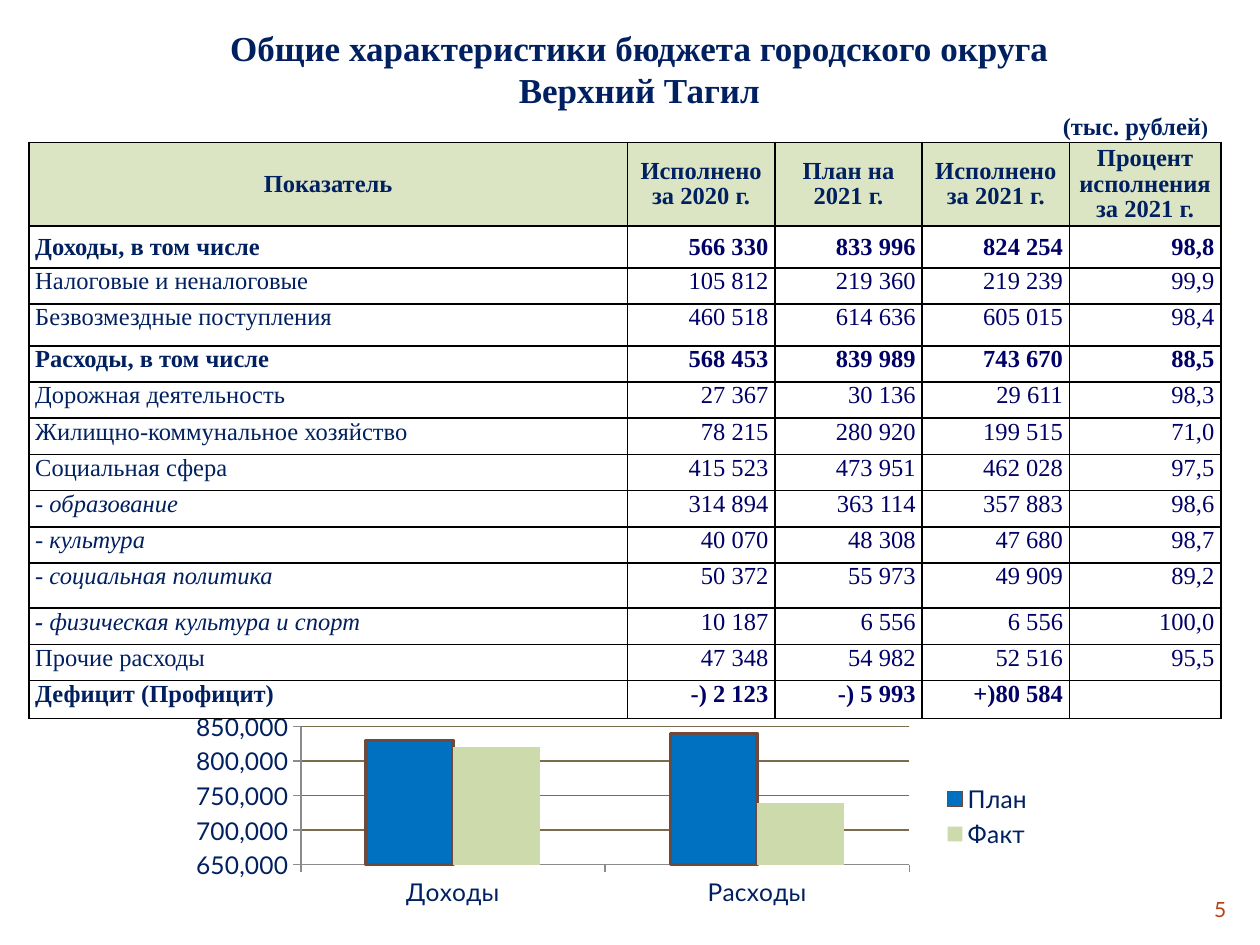
from lxml import etree
from pptx import Presentation
from pptx.chart.data import CategoryChartData as ChartData
from pptx.dml.color import RGBColor as RGB
from pptx.enum.chart import XL_CHART_TYPE as Kind, XL_LEGEND_POSITION as Side, XL_TICK_MARK as Tick
from pptx.enum.text import MSO_ANCHOR as Anchor, MSO_AUTO_SIZE as Auto, PP_ALIGN as Align
from pptx.oxml import parse_xml
from pptx.oxml.ns import nsdecls, qn
from pptx.util import Cm, Pt

NAVY = RGB(0x00, 0x20, 0x60)
INDIGO = RGB(0x00, 0x00, 0x66)
BLUE = RGB(0x00, 0x70, 0xC0)
GREEN = RGB(0xCC, 0xDA, 0xAC)
BROWN = RGB(0x6E, 0x49, 0x3C)
OLIVE = RGB(0x7C, 0x6B, 0x4D)
GREY = RGB(0x8B, 0x8B, 0x8B)
RUST = RGB(0xBA, 0x40, 0x14)
SERIF, SANS = "Times New Roman", "Lato"

HEAD = ["Показатель", "Исполнено за 2020 г.", "План на 2021 г.",
        "Исполнено за 2021 г.", "Процент исполнения за 2021 г."]
ROWS = [
    ("Доходы, в том числе", "566 330", "833 996", "824 254", "98,8"),
    ("Налоговые и неналоговые", "105 812", "219 360", "219 239", "99,9"),
    ("Безвозмездные поступления", "460 518", "614 636", "605 015", "98,4"),
    ("Расходы, в том числе", "568 453", "839 989", "743 670", "88,5"),
    ("Дорожная деятельность", "27 367", "30 136", "29 611", "98,3"),
    ("Жилищно-коммунальное хозяйство", "78 215", "280 920", "199 515", "71,0"),
    ("Социальная сфера", "415 523", "473 951", "462 028", "97,5"),
    ("- образование", "314 894", "363 114", "357 883", "98,6"),
    ("- культура", "40 070", "48 308", "47 680", "98,7"),
    ("- социальная политика", "50 372", "55 973", "49 909", "89,2"),
    ("- физическая культура и спорт", "10 187", "6 556", "6 556", "100,0"),
    ("Прочие расходы", "47 348", "54 982", "52 516", "95,5"),
    ("Дефицит (Профицит)", "-) 2 123", "-) 5 993", "+)80 584", ""),
]
TOTALS = {1, 4, 13}
SPORT = 11
WIDTHS = [12.07, 2.97, 2.97, 2.97, 3.05]
TALL = {0: 1.27, 1: 0.84, 3: 0.84, 10: 0.91}


def write(para, text, size=14, color=NAVY, bold=False, slant=False, face=SERIF, align=None):
    run = para.add_run()
    run.text = text
    font = run.font
    font.size, font.name = Pt(size), face
    font.bold, font.italic = bold, slant
    font.color.rgb = color
    if align is not None:
        para.alignment = align


def place(shape, box):
    shape.left, shape.top, shape.width, shape.height = map(Cm, box)


def add_title(slide, box):
    shape = slide.shapes.title
    place(shape, box)
    frame = shape.text_frame
    frame.word_wrap, frame.auto_size = True, Auto.NONE
    frame.vertical_anchor = Anchor.TOP
    first = frame.paragraphs[0]
    write(first, "Общие характеристики бюджета городского округа",
          size=20, bold=True, align=Align.CENTER)
    write(frame.add_paragraph(), "Верхний Тагил", size=20, bold=True, align=Align.CENTER)
    unit = frame.add_paragraph()
    write(unit, "(тыс. рублей", bold=True, align=Align.RIGHT)
    write(unit, ")", size=12, bold=True)


def frame_cell(cell):
    props = cell._tc.get_or_add_tcPr()
    for side in ("lnL", "lnR", "lnT", "lnB"):
        props.append(parse_xml(
            f'<a:{side} {nsdecls("a")} w="12700"><a:solidFill>'
            f'<a:srgbClr val="000000"/></a:solidFill></a:{side}>'))


def tint(cell):
    cell.fill.solid()
    cell.fill.fore_color.rgb = GREEN
    color = cell._tc.tcPr.find(qn("a:solidFill")).find(qn("a:srgbClr"))
    etree.SubElement(color, qn("a:alpha")).set("val", "70000")


def fill_cell(cell, row, col, text):
    cell.margin_left = cell.margin_right = Cm(0.13)
    cell.margin_top = cell.margin_bottom = 0
    cell.vertical_anchor = Anchor.MIDDLE if row < 2 else Anchor.TOP
    frame_cell(cell)
    para = cell.text_frame.paragraphs[0]
    if row == 0:
        tint(cell)
        para.line_spacing = 0.95
        write(para, text, bold=True, align=Align.CENTER)
        return
    cell.fill.background()
    bold = row in TOTALS
    if col:
        write(para, text, color=INDIGO, bold=bold, align=Align.RIGHT)
    elif row == SPORT:
        write(para, text[:2], bold=True, slant=True)
        write(para, text[2:], slant=True)
    else:
        write(para, text, bold=bold, slant=text.startswith("-"))


def add_grid(slide, box):
    data = [HEAD, *ROWS]
    table = slide.shapes.add_table(len(data), len(HEAD), *map(Cm, box)).table
    for col, width in zip(table.columns, WIDTHS):
        col.width = Cm(width)
    for i, texts in enumerate(data):
        table.rows[i].height = Cm(TALL.get(i, 0.73))
        for j, text in enumerate(texts):
            fill_cell(table.cell(i, j), i, j, text)


def style(font, size=14):
    font.size, font.name = Pt(size), SANS
    font.color.rgb = NAVY


def set_plot(chart, box):
    area = chart._chartSpace.chart.plotArea
    old = area.find(qn("c:layout"))
    if old is not None:
        area.remove(old)
    spots = "".join(f'<c:{key} val="{val}"/>' for key, val in zip("xywh", box))
    modes = '<c:xMode val="edge"/><c:yMode val="edge"/>'
    area.insert(0, parse_xml(
        f'<c:layout {nsdecls("c")}><c:manualLayout><c:layoutTarget val="inner"/>'
        f'{modes}{spots}</c:manualLayout></c:layout>'))


def add_bars(slide, box):
    data = ChartData(number_format="#,##0")
    data.categories = ["Доходы", "Расходы"]
    data.add_series("План", (830000, 840000))
    data.add_series("Факт", (820000, 740000))
    chart = slide.shapes.add_chart(Kind.COLUMN_CLUSTERED, *map(Cm, box), data).chart
    style(chart.font, 18)
    chart.has_title = False
    chart.has_legend = True
    chart.legend.position = Side.RIGHT
    chart.legend.include_in_layout = False
    style(chart.legend.font)
    plot = chart.plots[0]
    plot.gap_width, plot.overlap, plot.vary_by_categories = 150, 0, False
    for item, color in zip(plot.series, (BLUE, GREEN)):
        item.format.fill.solid()
        item.format.fill.fore_color.rgb = color
    edge = plot.series[0].format.line
    edge.width = Pt(2)
    edge.color.rgb = BROWN
    for axis in (chart.category_axis, chart.value_axis):
        axis.major_tick_mark = Tick.OUTSIDE
        axis.format.line.color.rgb = GREY
        style(axis.tick_labels.font)
    axis = chart.value_axis
    axis.minimum_scale, axis.maximum_scale, axis.major_unit = 650000, 850000, 50000
    axis.tick_labels.number_format = "#,##0"
    axis.tick_labels.number_format_is_linked = False
    grid = axis.major_gridlines.format.line
    grid.width = Pt(0.75)
    grid.color.rgb = OLIVE
    set_plot(chart, (0.18, 0.09, 0.67, 0.63))


def add_page(slide, box):
    frame = slide.shapes.add_textbox(*map(Cm, box)).text_frame
    frame.word_wrap = True
    frame.vertical_anchor = Anchor.MIDDLE
    write(frame.paragraphs[0], "5", size=12, color=RUST, face=SANS, align=Align.RIGHT)


def main():
    deck = Presentation()
    deck.slide_width, deck.slide_height = Cm(25.4), Cm(19.05)
    slide = deck.slides.add_slide(deck.slide_layouts[5])
    add_page(slide, (22.86, 17.98, 2.11, 0.69))
    add_bars(slide, (2.77, 14.25, 18.31, 4.42))
    add_grid(slide, (0.58, 2.87, 24.03, 11.63))
    add_title(slide, (1.17, 0.41, 23.44, 2.57))
    deck.save("out.pptx")


if __name__ == "__main__":
    main()
